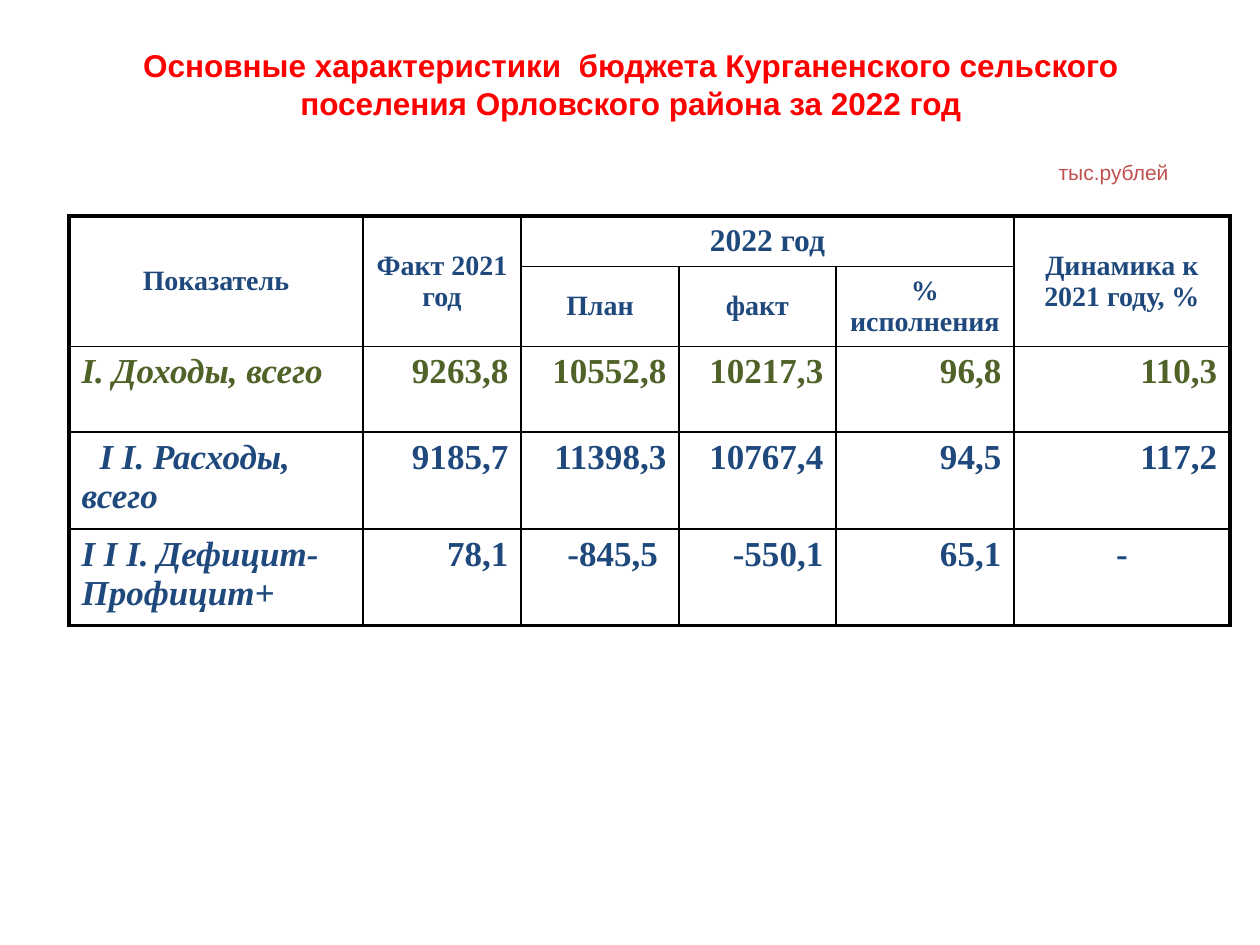
from dataclasses import dataclass

from lxml import etree
from pptx import Presentation
from pptx.dml.color import RGBColor
from pptx.enum.text import MSO_ANCHOR, PP_ALIGN
from pptx.oxml.ns import qn
from pptx.util import Pt

LEFT, CENTER, RIGHT = PP_ALIGN.LEFT, PP_ALIGN.CENTER, PP_ALIGN.RIGHT
TOP, MIDDLE = MSO_ANCHOR.TOP, MSO_ANCHOR.MIDDLE
EMU_PER_PX = 914400 / 126


@dataclass(frozen=True)
class Theme:
    title_font: str = "Arial"
    table_font: str = "Times New Roman"
    red: str = "FF0000"
    brick: str = "C0504D"
    navy: str = "1F497D"
    green: str = "4F6228"
    black: str = "000000"
    title_size: int = 18
    unit_size: int = 12
    header_size: int = 16
    year_size: int = 18
    body_size: int = 20
    thin: float = 1
    thick: float = 2.25


THEME = Theme()

COLUMNS = [294, 158, 158, 157, 178, 216]
ROWS = [43, 78, 86, 86, 86]

# (row, column, last row, last column, text, size)
HEADERS = [
    (0, 0, 1, 0, "Показатель", THEME.header_size),
    (0, 1, 1, 1, "Факт 2021 год", THEME.header_size),
    (0, 2, 0, 4, "2022 год", THEME.year_size),
    (0, 5, 1, 5, "Динамика к 2021 году, %", THEME.header_size),
    (1, 2, 1, 2, "План", THEME.header_size),
    (1, 3, 1, 3, "факт", THEME.header_size),
    (1, 4, 1, 4, "% исполнения", THEME.header_size),
]

# (colour, label, values)
BUDGET = [
    (THEME.green, "I. Доходы, всего",
     ["9263,8", "10552,8", "10217,3", "96,8", "110,3"]),
    (THEME.navy, "I I. Расходы, всего",
     ["9185,7", "11398,3", "10767,4", "94,5", "117,2"]),
    (THEME.navy, "I I I. Дефицит-Профицит+",
     ["78,1", "-845,5", "-550,1", "65,1", "-"]),
]


def px(length):
    return round(length * EMU_PER_PX)


def write(frame, text, font, size, color, align, bold=True, italic=False):
    """Put one formatted paragraph into a text frame."""
    frame.text = text
    para = frame.paragraphs[0]
    para.alignment = align
    for span in para.runs:
        span.font.name = font
        span.font.size = Pt(size)
        span.font.bold = bold
        span.font.italic = italic
        span.font.color.rgb = RGBColor.from_string(color)
    return para


def add_label(page, left, top, width, height, text, size, color, align, bold):
    box = page.shapes.add_textbox(px(left), px(top), px(width), px(height))
    frame = box.text_frame
    frame.word_wrap = True
    frame.vertical_anchor = MIDDLE
    write(frame, text, THEME.title_font, size, color, align, bold)


def set_borders(cell, row, column):
    """Thick lines on the table's outer edge, thin lines inside."""
    edges = {
        "a:lnL": column == 0,
        "a:lnR": column == len(COLUMNS) - 1,
        "a:lnT": row == 0,
        "a:lnB": row == len(ROWS) - 1,
    }
    properties = cell._tc.get_or_add_tcPr()
    for position, (tag, outer) in enumerate(edges.items()):
        width = Pt(THEME.thick if outer else THEME.thin)
        line = etree.Element(qn(tag), w=str(width))
        fill = etree.SubElement(line, qn("a:solidFill"))
        etree.SubElement(fill, qn("a:srgbClr"), val=THEME.black)
        properties.insert(position, line)


def fill_cell(cell, text, size, color, align, anchor, space, italic=False):
    cell.vertical_anchor = anchor
    para = write(cell.text_frame, text, THEME.table_font, size, color, align,
                 italic=italic)
    para.space_before = Pt(space)
    return para


def add_grid(page, left, top):
    frame = page.shapes.add_table(len(ROWS), len(COLUMNS), px(left), px(top),
                                  px(sum(COLUMNS)), px(sum(ROWS)))
    table = frame.table
    table.first_row = table.horz_banding = False
    for column, width in zip(table.columns, COLUMNS):
        column.width = px(width)
    for row, height in zip(table.rows, ROWS):
        row.height = px(height)
    for row in range(len(ROWS)):
        for column in range(len(COLUMNS)):
            cell = table.cell(row, column)
            cell.fill.background()
            set_borders(cell, row, column)
    return table


def fill_headers(table):
    for row, column, last_row, last_column, text, size in HEADERS:
        cell = table.cell(row, column)
        if (row, column) != (last_row, last_column):
            cell.merge(table.cell(last_row, last_column))
        fill_cell(cell, text, size, THEME.navy, CENTER, MIDDLE, 4.3)


def fill_budget(table):
    for row, (color, label, values) in enumerate(BUDGET, start=2):
        fill_cell(table.cell(row, 0), label, THEME.body_size, color, LEFT,
                  TOP, 4.8, italic=True)
        for column, value in enumerate(values, start=1):
            align = CENTER if value == "-" else RIGHT
            fill_cell(table.cell(row, column), value, THEME.body_size, color,
                      align, TOP, 4.8)

    # The expenses label starts indented; the planned deficit sits further in
    expenses = table.cell(3, 0).text_frame.paragraphs[0]
    expenses._p.get_or_add_pPr().set("indent", str(px(18)))
    table.cell(4, 2).margin_right = px(21)


def main():
    deck = Presentation()
    deck.slide_width, deck.slide_height = px(1260), px(945)
    page = deck.slides.add_slide(deck.slide_layouts[6])

    # Heading and unit of measure
    add_label(page, 64, 36, 1134, 96,
              "Основные характеристики  бюджета Курганенского сельского "
              "поселения Орловского района за 2022 год",
              THEME.title_size, THEME.red, CENTER, True)
    add_label(page, 981, 152, 200, 40, "тыс.рублей",
              THEME.unit_size, THEME.brick, RIGHT, False)

    # Budget table
    table = add_grid(page, 69, 216)
    fill_headers(table)
    fill_budget(table)

    deck.save("out.pptx")


if __name__ == "__main__":
    main()
